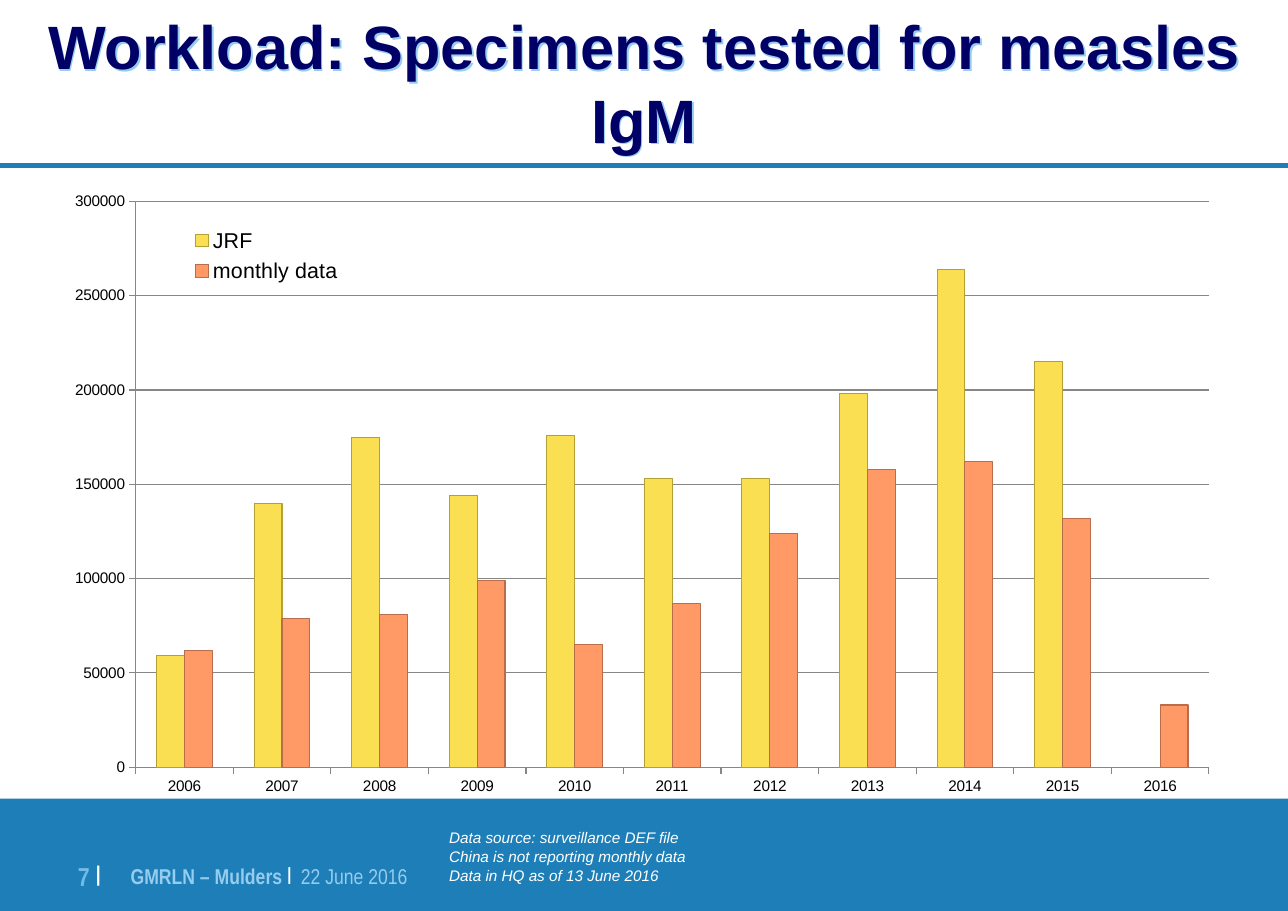
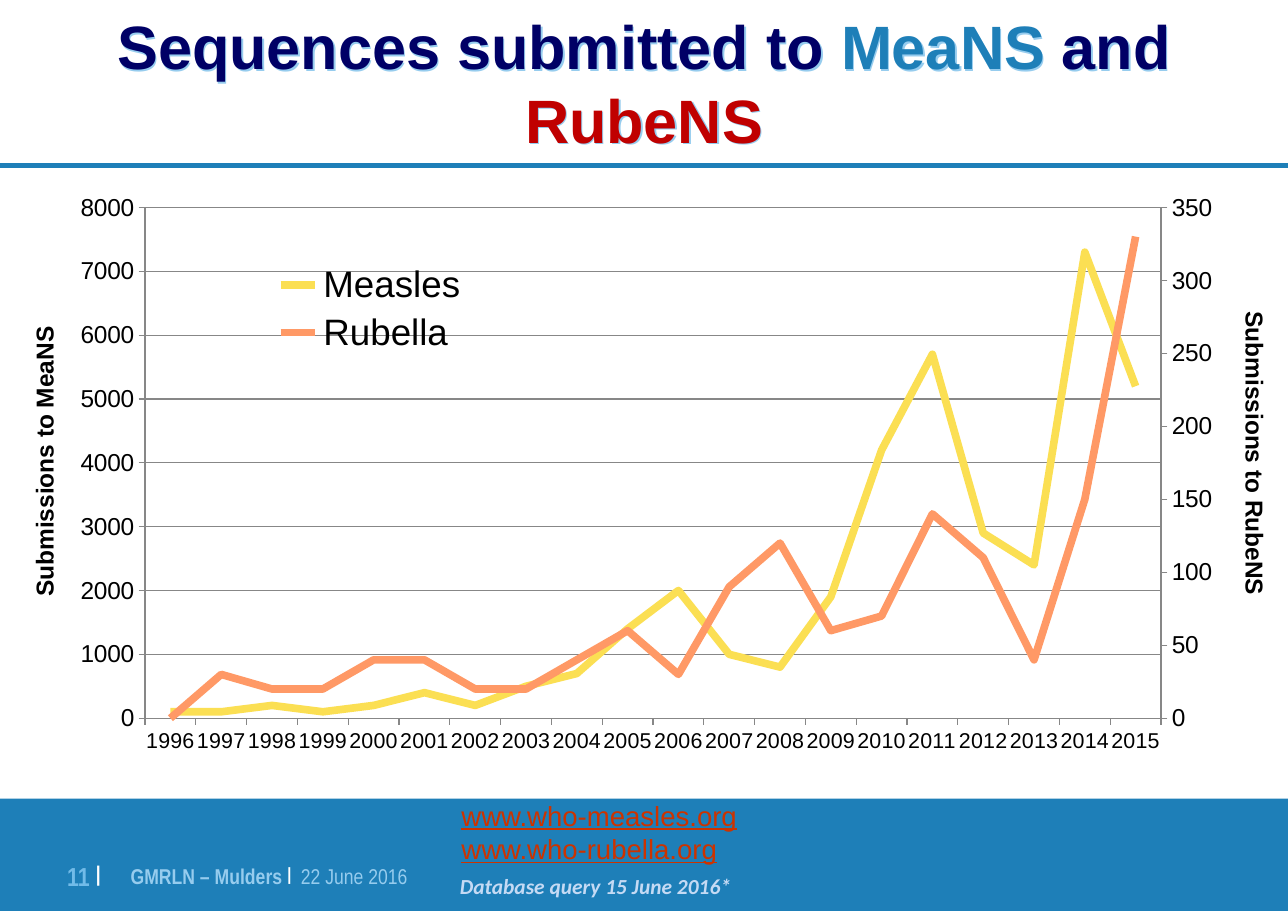
import copy

import pptx
import pptx.chart.data
import pptx.dml.color
import pptx.enum.chart
import pptx.enum.shapes
import pptx.enum.text
import pptx.oxml
import pptx.oxml.ns
import pptx.util

Pt = pptx.util.Pt
RGB = pptx.dml.color.RGBColor
qn = pptx.oxml.ns.qn
KIND = pptx.enum.chart.XL_CHART_TYPE
ALIGN = pptx.enum.text.PP_ALIGN

# Colours and sizes
NAVY, BLUE, RED = RGB(0, 0, 0x66), RGB(0x1E, 0x7F, 0xB8), RGB(0xC0, 0, 0)
PALE, SOFT, MIST = RGB(0x96, 0xCC, 0xEE), RGB(0x72, 0xBB, 0xE8), RGB(0xC4, 0xDA, 0xF4)
WHITE, BLACK, GREY = RGB(255, 255, 255), RGB(0, 0, 0), RGB(0x87, 0x87, 0x87)
YELLOW, ORANGE = RGB(0xFB, 0xDF, 0x53), RGB(0xFF, 0x99, 0x66)
OLIVE, BROWN = RGB(0xB5, 0xA0, 0x35), RGB(0xB8, 0x6E, 0x4A)
LINK = RGB(0xCC, 0x33, 0)
WIDE, HIGH, RULE, BAND = 841.7, 595.4, 108, 522

# Content
SLIDES = [
    {
        "num": "7",
        "title": [("Workload: Specimens tested for measles IgM", {})],
        "kind": KIND.COLUMN_CLUSTERED,
        "top": 122.4,
        "plot": (0.063, 0.023, 0.919, 0.924),
        "key": (0.105, 0.057, 0.14, 0.11),
        "sizes": {"cat": 10, "val": 10, "key": 14},
        "scales": [(300000, 50000)],
        "years": range(2006, 2017),
        "series": {
            "JRF": [59000, 140000, 175000, 144000, 176000, 153000, 153000,
                    198000, 264000, 215000, None],
            "monthly data": [62000, 79000, 81000, 99000, 65000, 87000, 124000,
                             158000, 162000, 132000, 33000],
        },
        "notes": [
            ((285.6, 537.1, 234, 32.4), 0,
             ["Data source: surveillance DEF file",
              "China is not reporting monthly data"],
             {"size": 10, "color": WHITE, "italic": True}),
            ((285.6, 561.6, 234, 20.2), 0, ["Data in HQ as of 13 June 2016"],
             {"size": 10, "color": WHITE, "italic": True}),
        ],
    },
    {
        "num": "11",
        "title": [("Sequences submitted to ", {}), ("MeaNS", {"color": BLUE}),
                  (" and ", {}), ("RubeNS", {"color": RED})],
        "kind": KIND.LINE,
        "top": 120,
        "plot": (0.071, 0.039, 0.87, 0.834),
        "key": (0.174, 0.122, 0.18, 0.165),
        "sizes": {"cat": 14, "val": 16, "key": 24},
        "scales": [(8000, 1000), (350, 50)],
        "years": range(1996, 2016),
        "series": {
            "Measles": [100, 100, 200, 100, 200, 400, 200, 500, 700, 1400,
                        2000, 1000, 800, 1900, 4200, 5700, 2900, 2400, 7300, 5200],
            "Rubella": [0, 30, 20, 20, 40, 40, 20, 20, 40, 60,
                        30, 90, 120, 60, 70, 140, 110, 40, 150, 330],
        },
        "notes": [
            ((292.6, 566.6, 195.8, 25.2), 0, ["Database query 15 June 2016*"],
             {"size": 14, "color": MIST, "font": "Calibri", "bold": True, "italic": True}),
            ((294.5, 518.4, 196.6, 51.1), 0,
             ["www.who-measles.org", "www.who-rubella.org"],
             {"size": 18, "color": LINK, "under": True, "inset": (7.2, 3.6)}),
            ((-84.2, 270.7, 226.1, 26.6), 270, ["Submissions to MeaNS"],
             {"size": 16, "color": BLACK, "bold": True, "inset": (7.2, 3.6)}),
            ((710, 293.4, 220.3, 26.6), 90, ["Submissions to RubeNS"],
             {"size": 16, "color": BLACK, "bold": True, "inset": (7.2, 3.6)}),
        ],
    },
]


def style(run, size, color, font="Arial", bold=False, italic=False,
          under=False, lift=0, gap=0):
    face = run.font
    face.size, face.name = Pt(size), font
    face.bold, face.italic, face.underline = bold, italic, under
    face.color.rgb = color
    props = run._r.get_or_add_rPr()
    if lift:
        props.set("baseline", str(lift * 1000))
    if gap:
        props.set("spc", str(gap * 100))


def write(shape, paras, inset=(0, 0), align=ALIGN.LEFT, middle=False, **fmt):
    """Fill a shape; each paragraph is a string or a list of (text, format)."""
    frame = shape.text_frame
    frame.word_wrap = True
    frame.auto_size = pptx.enum.text.MSO_AUTO_SIZE.NONE
    anchor = pptx.enum.text.MSO_ANCHOR
    frame.vertical_anchor = anchor.MIDDLE if middle else anchor.TOP
    frame.margin_left = frame.margin_right = Pt(inset[0])
    frame.margin_top = frame.margin_bottom = Pt(inset[1])
    for i, para in enumerate(paras):
        line = frame.add_paragraph() if i else frame.paragraphs[0]
        line.alignment = align
        line.space_before = Pt(0)
        for text, extra in [(para, {})] if isinstance(para, str) else para:
            run = line.add_run()
            run.text = text
            style(run, **{**fmt, **extra})


def place(shape, box):
    shape.left, shape.top, shape.width, shape.height = map(Pt, box)


def label(slide, box, paras, turn=0, **fmt):
    shape = slide.shapes.add_textbox(*map(Pt, box))
    shape.rotation = turn
    write(shape, paras, **fmt)


def effect(shape, inner=""):
    shape._element.spPr.append(pptx.oxml.parse_xml(
        f'<a:effectLst {pptx.oxml.ns.nsdecls("a")}>{inner}</a:effectLst>'))


def frame(slide, num, title):
    # Rule, band and footer
    rule = slide.shapes.add_connector(
        pptx.enum.shapes.MSO_CONNECTOR.STRAIGHT, Pt(0), Pt(RULE), Pt(WIDE), Pt(RULE))
    rule.line.color.rgb, rule.line.width = BLUE, Pt(3)
    effect(rule)
    band = slide.shapes.add_shape(
        pptx.enum.shapes.MSO_SHAPE.RECTANGLE, Pt(0), Pt(BAND), Pt(WIDE), Pt(HIGH - BAND))
    band.shadow.inherit = False
    band.fill.solid()
    band.fill.fore_color.rgb = BLUE
    band.line.fill.background()
    narrow = {"font": "Arial Narrow", "bold": True}
    label(slide, (85.4, 558, 391, 37.4),
          [[("GMRLN – Mulders ", {}),
            ("|", {"size": 20, "color": WHITE, "lift": 12, "gap": 3}),
            (" 22 June 2016", {"bold": False})]],
          size=14, color=PALE, **narrow)
    label(slide, (33.4, 555.4, 32.4, 28.8),
          [[(num + " ", {}), ("|", {"size": 24, "color": WHITE, "lift": 14})]],
          align=ALIGN.RIGHT, size=17, color=SOFT, **narrow)

    # Title with a pale blue shadow
    head = slide.shapes.title
    place(head, (0, 0, WIDE, 107.3))
    write(head, [title], align=ALIGN.CENTER, middle=True,
          size=40, color=NAVY, bold=True)
    head.fill.background()
    effect(head, f'<a:outerShdw dist="19050" dir="2700000"><a:srgbClr val="{PALE}"/></a:outerShdw>')


def layout(parent, box, inner=False):
    """Set a fixed place, in fractions of the chart, for the plot or legend."""
    target = '<c:layoutTarget val="inner"/>' if inner else ""
    modes = "".join(f'<c:{n}Mode val="edge"/>' for n in "xy")
    sides = "".join(f'<c:{n} val="{v}"/>' for n, v in zip("xywh", box))
    for old in parent.findall(qn("c:layout")):
        parent.remove(old)
    new = pptx.oxml.parse_xml(
        f'<c:layout {pptx.oxml.ns.nsdecls("c")}><c:manualLayout>'
        f'{target}{modes}{sides}</c:manualLayout></c:layout>')
    if inner:
        parent.insert(0, new)
    else:
        parent.find(qn("c:legendPos")).addnext(new)


def split(chart, top, step):
    """Move the last series to a second value axis on the right."""
    area = chart._chartSpace.chart.plotArea
    first = area.find(qn("c:lineChart"))
    second = copy.deepcopy(first)
    first.remove(first.findall(qn("c:ser"))[-1])
    for ser in second.findall(qn("c:ser"))[:-1]:
        second.remove(ser)
    first.addnext(second)
    cat, val = (copy.deepcopy(area.find(qn(n))) for n in ("c:catAx", "c:valAx"))
    for axis, own, cross in ((cat, "7001", "7002"), (val, "7002", "7001")):
        axis.find(qn("c:axId")).set("val", own)
        axis.find(qn("c:crossAx")).set("val", cross)
    for node, own in zip(second.findall(qn("c:axId")), ("7001", "7002")):
        node.set("val", own)
    cat.find(qn("c:delete")).set("val", "1")
    val.remove(val.find(qn("c:majorGridlines")))
    for name, value in (("axPos", "r"), ("crosses", "max"), ("majorUnit", step)):
        val.find(qn("c:" + name)).set("val", str(value))
    val.find(qn("c:scaling")).find(qn("c:max")).set("val", str(top))
    last = area.findall(qn("c:valAx"))[-1]
    last.addnext(cat)
    cat.addnext(val)


def graph(slide, item):
    data = pptx.chart.data.CategoryChartData()
    data.categories = [str(year) for year in item["years"]]
    for name, vals in item["series"].items():
        data.add_series(name, vals)
    chart = slide.shapes.add_chart(
        item["kind"], Pt(40.6), Pt(item["top"]), Pt(763.2), Pt(400.3), data).chart
    chart.has_title = False
    chart.font.name, chart.font.size = "Arial", Pt(10)
    chart.font.color.rgb = BLACK
    sizes = item["sizes"]

    # Legend
    chart.has_legend = True
    chart.legend.include_in_layout = False
    chart.legend.position = pptx.enum.chart.XL_LEGEND_POSITION.RIGHT
    chart.legend.font.size = Pt(sizes["key"])
    layout(chart.legend._element, item["key"])

    # Axes; automatic rotation keeps each year on one line
    cat, val = chart.category_axis, chart.value_axis
    for axis, size in ((cat, sizes["cat"]), (val, sizes["val"])):
        axis.major_tick_mark = pptx.enum.chart.XL_TICK_MARK.OUTSIDE
        axis.minor_tick_mark = pptx.enum.chart.XL_TICK_MARK.NONE
        axis.tick_labels.font.size = Pt(size)
        axis.format.line.color.rgb = GREY
        axis.format.line.width = Pt(0.75)
    turn = cat._element.find(qn("c:txPr")).find(qn("a:bodyPr"))
    turn.set("rot", "-60000000")
    turn.set("vert", "horz")
    val.minimum_scale = 0
    val.maximum_scale, val.major_unit = item["scales"][0]
    val.tick_labels.number_format = "0"
    val.tick_labels.number_format_is_linked = False
    val.has_major_gridlines = True
    val.major_gridlines.format.line.color.rgb = GREY
    val.major_gridlines.format.line.width = Pt(0.75)

    # Series
    plot = chart.plots[0]
    plot.vary_by_categories = False
    bars = item["kind"] == KIND.COLUMN_CLUSTERED
    if bars:
        plot.gap_width, plot.overlap = 150, 0
    for ser, color, edge in zip(plot.series, (YELLOW, ORANGE), (OLIVE, BROWN)):
        line = ser.format.line
        if bars:
            ser.format.fill.solid()
            ser.format.fill.fore_color.rgb = color
            line.color.rgb, line.width = edge, Pt(0.75)
        else:
            line.color.rgb, line.width = color, Pt(5)
            ser.smooth = False
            ser.marker.style = pptx.enum.chart.XL_MARKER_STYLE.NONE
    layout(chart._chartSpace.chart.plotArea, item["plot"], inner=True)
    for scale in item["scales"][1:]:
        split(chart, *scale)


def main():
    deck = pptx.Presentation()
    deck.slide_width, deck.slide_height = Pt(WIDE), Pt(HIGH)
    for item in SLIDES:
        slide = deck.slides.add_slide(deck.slide_layouts[5])
        frame(slide, item["num"], item["title"])
        graph(slide, item)
        for box, turn, lines, fmt in item["notes"]:
            label(slide, box, lines, turn, **{"inset": (7.9, 4.3), **fmt})
    deck.save("out.pptx")


if __name__ == "__main__":
    main()
